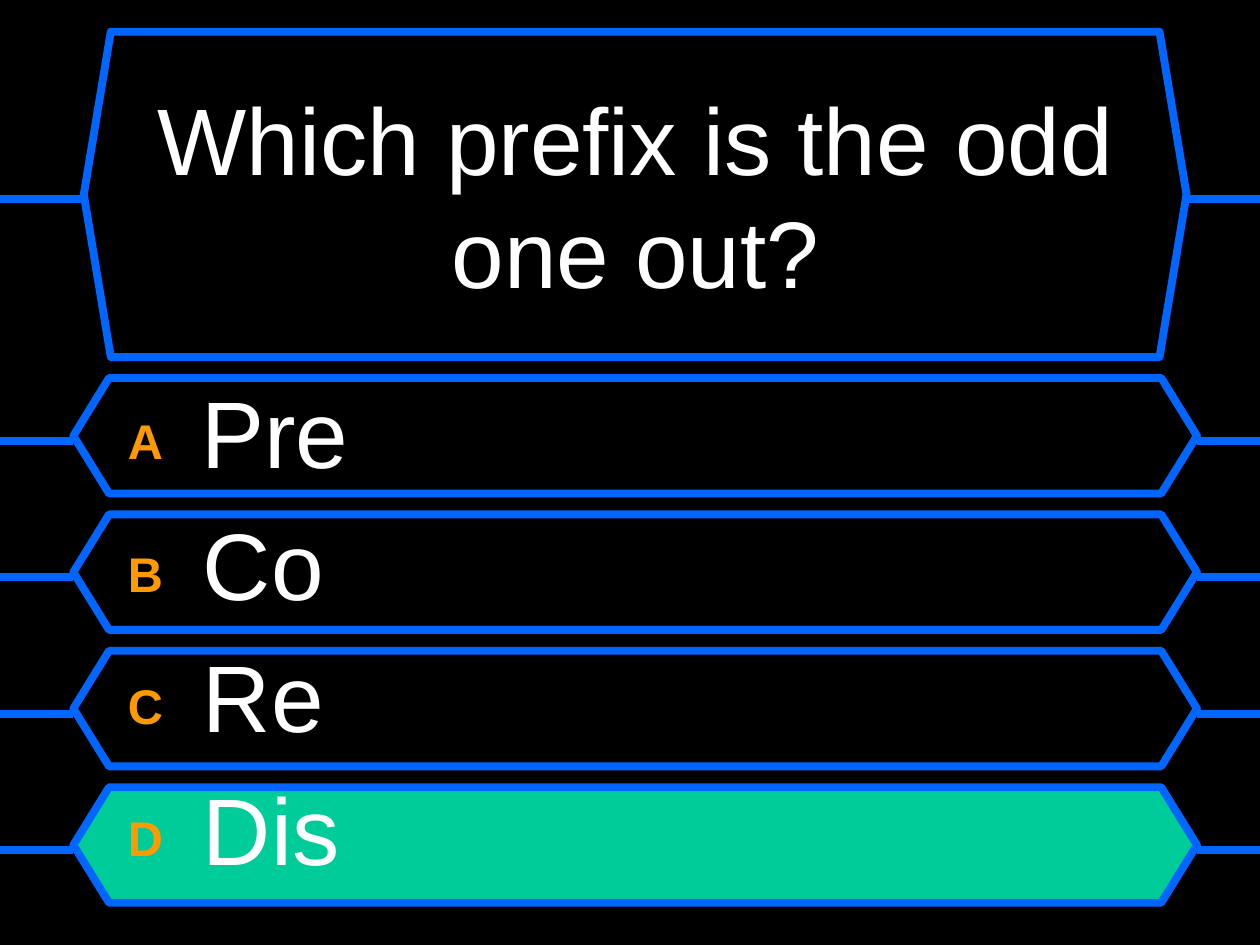
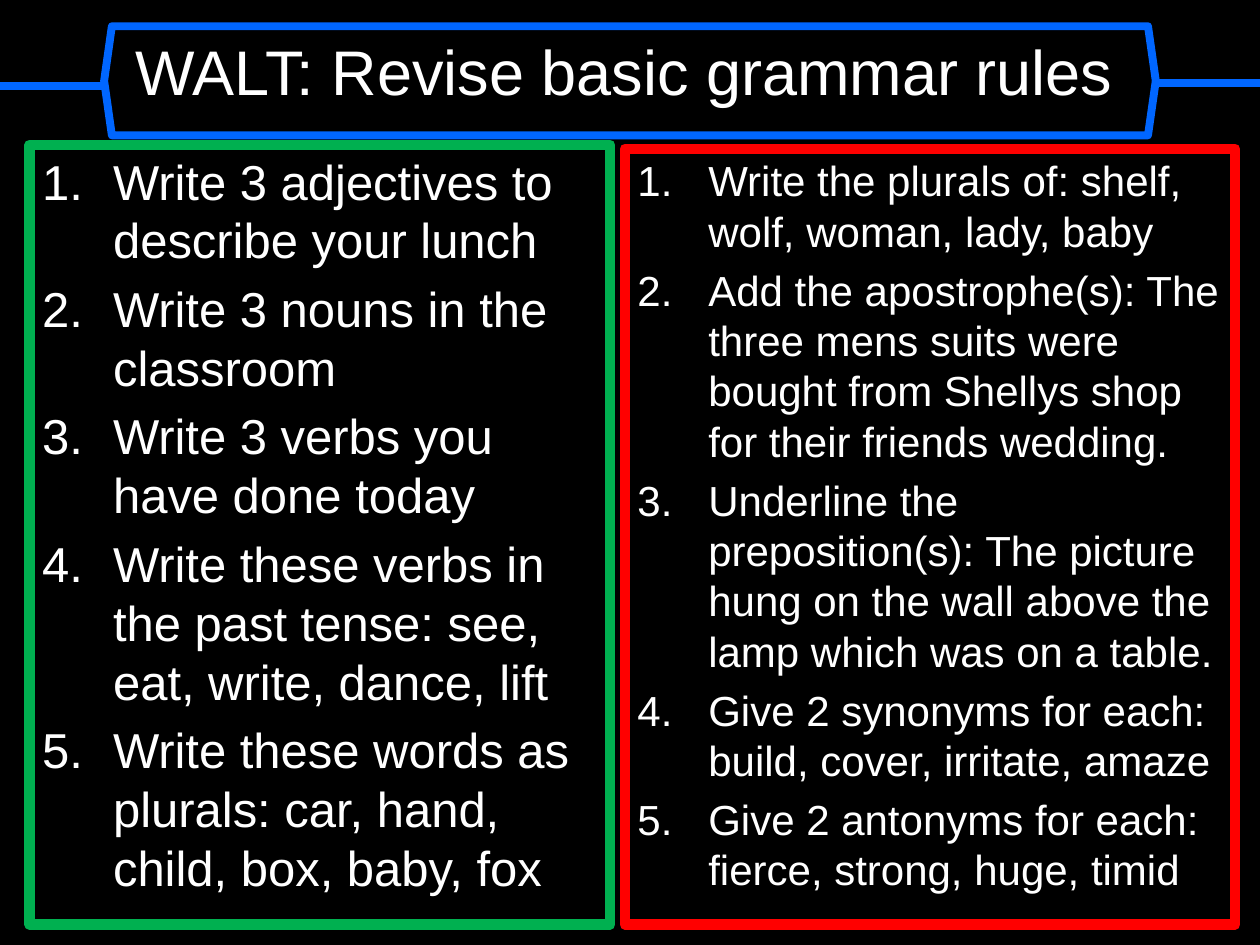
from dataclasses import dataclass

from lxml import etree
from pptx import Presentation
from pptx.dml.color import RGBColor
from pptx.enum.shapes import MSO_CONNECTOR as Conn, MSO_SHAPE as Shape
from pptx.enum.text import MSO_ANCHOR as Anchor, PP_ALIGN as Align
from pptx.oxml.ns import qn
from pptx.util import Cm, Pt


# Theme: colours, font and type sizes shared by both slides
@dataclass(frozen=True)
class Theme:
    back: str = "000000"
    text: str = "FFFFFF"
    frame: str = "0066FF"
    letter: str = "FF9900"
    correct: str = "00CC99"
    easy: str = "00B050"
    hard: str = "FF0000"
    font: str = "Arial"
    frame_pt: float = 4.5
    panel_pt: float = 6
    question_pt: int = 54
    letter_pt: int = 48
    heading_pt: int = 36


THEME = Theme()
SLIDE_W, SLIDE_H = 25.4, 19.05


# All lengths are in centimetres
@dataclass(frozen=True)
class Box:
    left: float
    top: float
    width: float
    height: float

    @property
    def right(self) -> float:
        return self.left + self.width

    def emu(self) -> tuple:
        return tuple(Cm(v) for v in (self.left, self.top, self.width, self.height))


@dataclass(frozen=True)
class Band:
    box: Box
    slant: float
    left_wire: float
    right_wire: float
    fill: str = THEME.back


@dataclass(frozen=True)
class TaskPanel:
    box: Box
    colour: str
    size: int
    tasks: tuple


def rgb(value: str) -> RGBColor:
    return RGBColor.from_string(value)


def outline(line, colour: str, width: float) -> None:
    line.color.rgb = rgb(colour)
    line.width = Pt(width)


def add_wire(s, start: float, end: float, y: float) -> None:
    wire = s.shapes.add_connector(Conn.STRAIGHT, Cm(start), Cm(y), Cm(end), Cm(y))
    outline(wire.line, THEME.frame, THEME.frame_pt)
    etree.SubElement(wire._element.spPr, qn("a:effectLst"))


def add_band(s, band: Band) -> None:
    """Hexagon with a wire from each tip to the slide edge."""
    sp = s.shapes.add_shape(Shape.HEXAGON, *band.box.emu())
    sp.adjustments[0] = band.slant
    sp.shadow.inherit = False
    sp.fill.solid()
    sp.fill.fore_color.rgb = rgb(band.fill)
    outline(sp.line, THEME.frame, THEME.frame_pt)
    add_wire(s, band.box.left, 0, band.left_wire)
    add_wire(s, SLIDE_W, band.box.right, band.right_wire)


def add_run(p, text: str, size: int, colour: str = THEME.text, bold: bool = False):
    r = p.add_run()
    r.text = text
    r.font.name = THEME.font
    r.font.size = Pt(size)
    r.font.bold = bold
    r.font.color.rgb = rgb(colour)
    return r


def add_text(s, box: Box):
    tf = s.shapes.add_textbox(*box.emu()).text_frame
    tf.word_wrap = True
    return tf


def add_item(tf, index: int, indent: float, numbered: bool = False):
    """Paragraph with a hanging indent and 20 % space before."""
    p = tf.paragraphs[0] if index == 0 else tf.add_paragraph()
    p.alignment = Align.LEFT
    pPr = p._p.get_or_add_pPr()
    pPr.set("marL", str(Cm(indent)))
    pPr.set("indent", str(-Cm(indent)))
    before = etree.SubElement(pPr, qn("a:spcBef"))
    etree.SubElement(before, qn("a:spcPct")).set("val", "20000")
    if numbered:
        etree.SubElement(pPr, qn("a:buFont")).set("typeface", THEME.font)
        etree.SubElement(pPr, qn("a:buAutoNum")).set("type", "arabicPeriod")
    return p


def add_panel(s, panel: TaskPanel) -> None:
    sp = s.shapes.add_shape(Shape.RECTANGLE, *panel.box.emu())
    sp.shadow.inherit = False
    sp.fill.background()
    outline(sp.line, panel.colour, panel.size and THEME.panel_pt)
    tf = sp.text_frame
    tf.word_wrap = True
    tf.vertical_anchor = Anchor.TOP
    for i, task in enumerate(panel.tasks):
        add_run(add_item(tf, i, 1.43, numbered=True), task, panel.size)


def new_slide(prs):
    s = prs.slides.add_slide(prs.slide_layouts[6])
    s.background.fill.solid()
    s.background.fill.fore_color.rgb = rgb(THEME.back)
    return s


# Slide 1: quiz question with four answers
ANSWERS = {"A": "Pre", "B": "Co", "C": "Re", "D": "Dis"}
CORRECT = "D"
ANSWER_TOP, ANSWER_PITCH, WIRE_DROP = 7.62, 2.75, 1.27


def build_quiz(prs) -> None:
    s = new_slide(prs)
    add_band(s, Band(Box(1.69, 0.64, 22.23, 6.56), 0.083, 4.02, 4.02))
    for i, letter in enumerate(ANSWERS):
        top = ANSWER_TOP + i * ANSWER_PITCH
        wire = top + WIRE_DROP
        fill = THEME.correct if letter == CORRECT else THEME.back
        add_band(s, Band(Box(1.48, top, 22.65, 2.33), 0.309, wire, wire, fill))

    tf = add_text(s, Box(2.12, 1.06, 21.38, 5.72))
    tf.vertical_anchor = Anchor.MIDDLE
    p = tf.paragraphs[0]
    p.alignment = Align.CENTER
    add_run(p, "Which prefix is the odd one out?", THEME.question_pt)

    tf = add_text(s, Box(2.33, 7.41, 21.17, 11))
    for i, (letter, answer) in enumerate(ANSWERS.items()):
        p = add_item(tf, i, 0.95)
        r = add_run(p, f"{letter} ", THEME.letter_pt, THEME.letter, bold=True)
        r.font._element.set("baseline", "10000")
        add_run(p, " ", THEME.question_pt, THEME.back)
        add_run(p, answer, THEME.question_pt)


# Slide 2: heading band above two lists of tasks
PANELS = (
    TaskPanel(Box(0.6, 2.92, 11.7, 15.72), THEME.easy, 28, (
        "Write 3 adjectives to describe your lunch",
        "Write 3 nouns in the classroom",
        "Write 3 verbs you have done today",
        "Write these verbs in the past tense: see, eat, write, dance, lift",
        "Write these words as plurals: car, hand, child, box, baby, fox",
    )),
    TaskPanel(Box(12.6, 3, 12.3, 15.64), THEME.hard, 24, (
        "Write the plurals of: shelf, wolf, woman, lady, baby",
        "Add the apostrophe(s): The three mens suits were bought from "
        "Shellys shop for their friends wedding.",
        "Underline the preposition(s): The picture hung on the wall above "
        "the lamp which was on a table.",
        "Give 2 synonyms for each: build, cover, irritate, amaze",
        "Give 2 antonyms for each: fierce, strong, huge, timid",
    )),
)


def build_tasks(prs) -> None:
    s = new_slide(prs)
    add_band(s, Band(Box(2.1, 0.53, 21.2, 2.2), 0.071, 1.73, 1.67))
    tf = add_text(s, Box(2.49, 0.53, 20.2, 1.8))
    add_run(tf.paragraphs[0], "WALT: Revise basic grammar rules", THEME.heading_pt)
    for panel in PANELS:
        add_panel(s, panel)


def main() -> None:
    prs = Presentation()
    prs.slide_width, prs.slide_height = Cm(SLIDE_W), Cm(SLIDE_H)
    build_quiz(prs)
    build_tasks(prs)
    prs.save("out.pptx")


if __name__ == "__main__":
    main()
